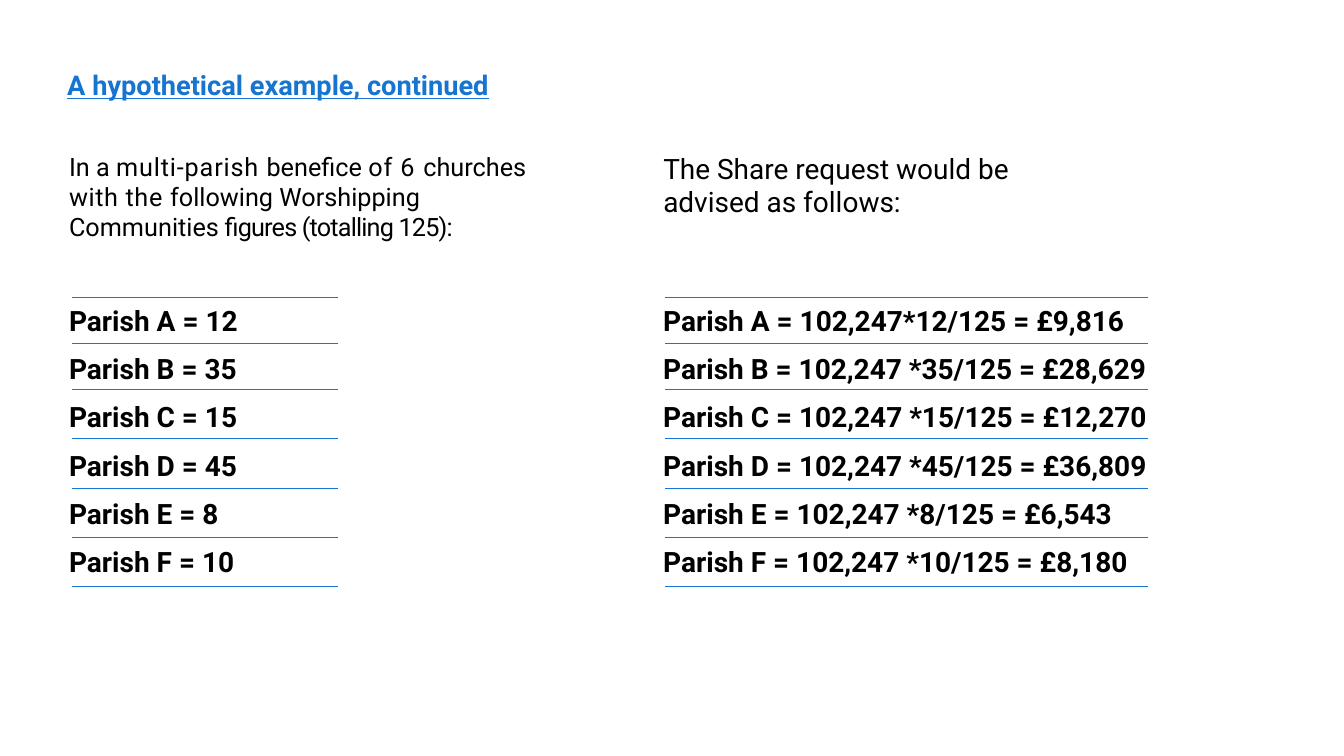
from pptx import Presentation
from pptx.dml.color import RGBColor
from pptx.enum.shapes import MSO_CONNECTOR
from pptx.enum.text import MSO_ANCHOR, MSO_AUTO_SIZE, PP_ALIGN
from pptx.oxml.ns import qn
from pptx.util import Inches, Pt
from lxml import etree

LEFT = PP_ALIGN.LEFT
TOP = MSO_ANCHOR.TOP
NO_AUTOFIT = MSO_AUTO_SIZE.NONE
STRAIGHT = MSO_CONNECTOR.STRAIGHT

SLIDE_WIDTH, SLIDE_HEIGHT = Pt(1583), Pt(890)
COLORS = {"accent": "1675D1", "text": "000000"}
FONT = "Roboto"
TITLE = "A hypothetical example, continued"
INTRO = [
    ("In a ", 0),
    ("multi-parish ", 1),
    ("benefice ", 0),
    ("of ", 1),
    ("6 ", 1.5),
    ("churches ", 0),
    ("with the ", 0.75),
    ("following Worshipping Communities", 0),
    (" figures (totalling 125):", -1),
]
REQUEST = [("The Share request would be advised as follows:", 0)]
COMMUNITIES = [
    "Parish A = 12",
    "Parish B = 35",
    "Parish C = 15",
    "Parish D = 45",
    "Parish E = 8",
    "Parish F = 10",
]
SHARES = [
    "Parish A = 102,247*12/125 = £9,816",
    "Parish B = 102,247 *35/125 = £28,629",
    "Parish C = 102,247 *15/125 = £12,270",
    "Parish D = 102,247 *45/125 = £36,809",
    "Parish E = 102,247 *8/125 = £6,543",
    "Parish F = 102,247 *10/125 = £8,180",
]
COLUMNS = [
    {"left": 1.13, "intro": INTRO, "intro_size": 29.7, "intro_box": (7.9, 2),
     "rows": COMMUNITIES, "row_width": 5.5, "rule": (1.17, 5.53)},
    {"left": 10.85, "intro": REQUEST, "intro_size": 33, "intro_box": (5.71, 1.11),
     "rows": SHARES, "row_width": 9.4, "rule": (10.88, 18.78)},
]
INTRO_TOP = 2.47
ROW_TOP, ROW_PITCH, ROW_HEIGHT = 4.96, 0.79, 0.56
RULE_TOPS = [4.86, 5.62, 6.37, 7.17, 7.98, 8.79, 9.58]


def write_text(shape, runs, size=33, color="text", bold=False, underline=False):
    frame = shape.text_frame
    frame.margin_left = frame.margin_right = 0
    frame.margin_top = frame.margin_bottom = 0
    frame.word_wrap = True
    frame.auto_size = NO_AUTOFIT
    frame.vertical_anchor = TOP
    paragraph = frame.paragraphs[0]
    paragraph.alignment = LEFT
    for text, spacing in runs:
        run = paragraph.add_run()
        run.text = text
        run.font.name = FONT
        run.font.size = Pt(size)
        run.font.bold = bold
        run.font.underline = underline
        run.font.color.rgb = RGBColor.from_string(COLORS[color])
        if spacing:
            run.font._element.set("spc", str(int(spacing * 100)))


def add_text(slide, left, top, width, height, runs, **text_format):
    box = slide.shapes.add_textbox(Inches(left), Inches(top), Inches(width), Inches(height))
    write_text(box, runs, **text_format)


def add_rule(slide, start, end, top):
    rule = slide.shapes.add_connector(
        STRAIGHT, Inches(start), Inches(top), Inches(end), Inches(top))
    rule.line.color.rgb = RGBColor.from_string(COLORS["accent"])
    rule.line.width = Pt(0.82)
    etree.SubElement(rule._element.spPr, qn("a:effectLst"))


def add_column(slide, column):
    add_text(slide, column["left"], INTRO_TOP, *column["intro_box"],
             column["intro"], size=column["intro_size"])
    for index, row in enumerate(column["rows"]):
        add_text(slide, column["left"], ROW_TOP + index * ROW_PITCH,
                 column["row_width"], ROW_HEIGHT, [(row, 0)], bold=True)
    for top in RULE_TOPS:
        add_rule(slide, *column["rule"], top)


def main():
    presentation = Presentation()
    presentation.slide_width = SLIDE_WIDTH
    presentation.slide_height = SLIDE_HEIGHT
    slide = presentation.slides.add_slide(presentation.slide_layouts[5])

    title = slide.shapes.title
    title.left, title.top = Inches(1.1), Inches(1.12)
    title.width, title.height = Inches(9.25), Inches(0.54)
    write_text(title, [(TITLE, 0)], size=32, color="accent", bold=True, underline=True)

    for column in COLUMNS:
        add_column(slide, column)
    presentation.save("out.pptx")


if __name__ == "__main__":
    main()
